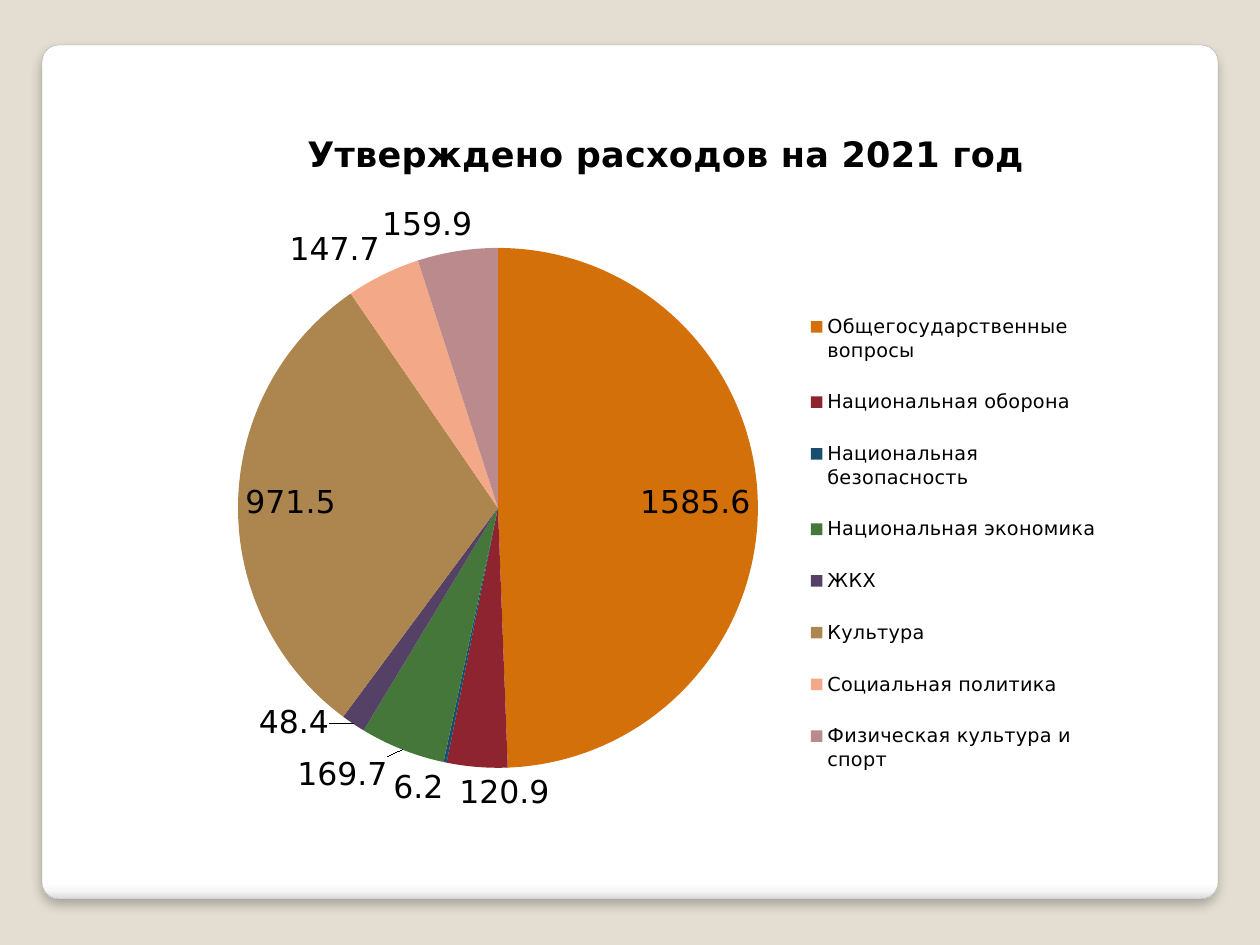
"""Build a slide with a pie chart of the approved expenses for 2021."""
from lxml import etree
from pptx import Presentation
from pptx import util as u
from pptx.chart.data import CategoryChartData
from pptx.dml.color import RGBColor
from pptx.enum import chart as ch
from pptx.enum import shapes
from pptx.oxml import parse_xml
from pptx.oxml.ns import nsdecls, qn

SCALE = 914400 / 126
INSIDE = ch.XL_LABEL_POSITION.INSIDE_END
OUTSIDE = ch.XL_LABEL_POSITION.OUTSIDE_END

EXPENSES = [
    ("Общегосударственные вопросы", 1585.6, "D4700A", INSIDE, None),
    ("Национальная оборона", 120.9, "8E2430", OUTSIDE, (28, 0)),
    ("Национальная безопасность", 6.2, "184E6E", OUTSIDE, None),
    ("Национальная экономика", 169.7, "45773A", OUTSIDE, (-12, 0)),
    ("ЖКХ", 48.4, "554066", OUTSIDE, (-20, -25)),
    ("Культура", 971.5, "AC864E", INSIDE, None),
    ("Социальная политика", 147.7, "F3A988", OUTSIDE, None),
    ("Физическая культура и спорт", 159.9, "BA8A8C", OUTSIDE, (16, 0)),
]


def px(length):
    return u.Emu(round(length * SCALE))


def color(value):
    return RGBColor.from_string(value)


def style_font(font, size, bold=False, name="DejaVu Sans", fill="000000"):
    font.name, font.size, font.bold = name, u.Pt(size), bold
    font.color.rgb = color(fill)


class SlideBuilder:
    """Hold the style and the current slide."""

    def __init__(self, deck, background):
        self.page = deck.slides.add_slide(deck.slide_layouts[6])
        self.page.background.fill.solid()
        self.page.background.fill.fore_color.rgb = color(background)

    def panel(self, left, top, width, height):
        box = self.page.shapes.add_shape(
            shapes.MSO_SHAPE.ROUNDED_RECTANGLE, *map(px, (left, top, width, height)))
        box.adjustments[0] = 0.02
        box.line.color.rgb = color("A4A4A4")
        box.line.width = u.Pt(0.16)
        stops = [(0, "FFFFFF"), (98, "FFFFFF"), (99, "F7F7F7"), (100, "DADADA")]
        marks = "".join(f'<a:gs pos="{pos * 1000}"><a:srgbClr val="{tone}"/></a:gs>'
                        for pos, tone in stops)
        properties = box.element.spPr
        properties.insert(2, parse_xml(
            f'<a:gradFill {nsdecls("a")}><a:gsLst>{marks}</a:gsLst>'
            '<a:lin ang="5400000" scaled="0"/></a:gradFill>'))
        properties.append(parse_xml(
            f'<a:effectLst {nsdecls("a")}><a:outerShdw blurRad="{u.Pt(6)}" '
            f'dist="{u.Pt(4)}" dir="5400000" algn="t" rotWithShape="0">'
            '<a:srgbClr val="000000"><a:alpha val="25000"/></a:srgbClr>'
            '</a:outerShdw></a:effectLst>'))

    def pie(self, left, top, width, height, title, rows):
        data = CategoryChartData()
        data.categories = [row[0] for row in rows]
        data.add_series("Series 1", [row[1] for row in rows])
        frame = self.page.shapes.add_chart(
            ch.XL_CHART_TYPE.PIE, *map(px, (left, top, width, height)), data)
        self.chart, self.chart_size = frame.chart, (width, height)
        style_font(self.chart.font, 18)
        self.title(title)
        self.legend()
        plot = self.chart.plots[0]
        plot.vary_by_categories = True
        self.place("plotArea", 0, 64, 142, 520, 520, inner=True)
        for index, (_, _, tone, position, shift) in enumerate(rows):
            point = plot.series[0].points[index]
            point.format.fill.solid()
            point.format.fill.fore_color.rgb = color(tone)
            style_font(point.data_label.font, 18)
            point.data_label.position = position
            if shift:
                self.place("dLbl", 1, *shift, offset=True)

    def title(self, wording):
        self.chart.has_title = True
        self.chart.chart_title.include_in_layout = False
        span = self.chart.chart_title.text_frame.paragraphs[0].add_run()
        span.text = wording
        style_font(span.font, 20, bold=True)
        self.place("title", 1, 127, 18)

    def legend(self):
        self.chart.has_legend = True
        self.chart.legend.position = ch.XL_LEGEND_POSITION.RIGHT
        self.chart.legend.include_in_layout = False
        style_font(self.chart.legend.font, 11)
        self.place("legend", 1, 628, 181, 303, 513)

    def place(self, tag, index, *lengths, inner=False, offset=False):
        parent = self.chart.element.findall(".//" + qn(f"c:{tag}"))[-1]
        for old in parent.findall(qn("c:layout")):
            parent.remove(old)
        values = [("layoutTarget", "inner")] if inner else []
        if not offset:
            values += [("xMode", "edge"), ("yMode", "edge")]
        values += [(name, str(length / size)) for name, length, size
                   in zip("xywh", lengths, self.chart_size * 2)]
        layout = parse_xml(f'<c:layout {nsdecls("c")}><c:manualLayout/></c:layout>')
        for name, value in values:
            etree.SubElement(layout[0], qn(f"c:{name}")).set("val", value)
        parent.insert(index, layout)


def main():
    deck = Presentation()
    deck.slide_width, deck.slide_height = px(1260), px(945)
    slide = SlideBuilder(deck, "E3DED1")
    slide.panel(42, 45, 1176, 854)
    slide.pie(174, 106, 946, 724, "Утверждено расходов на 2021 год", EXPENSES)
    deck.save("out.pptx")


if __name__ == "__main__":
    main()
